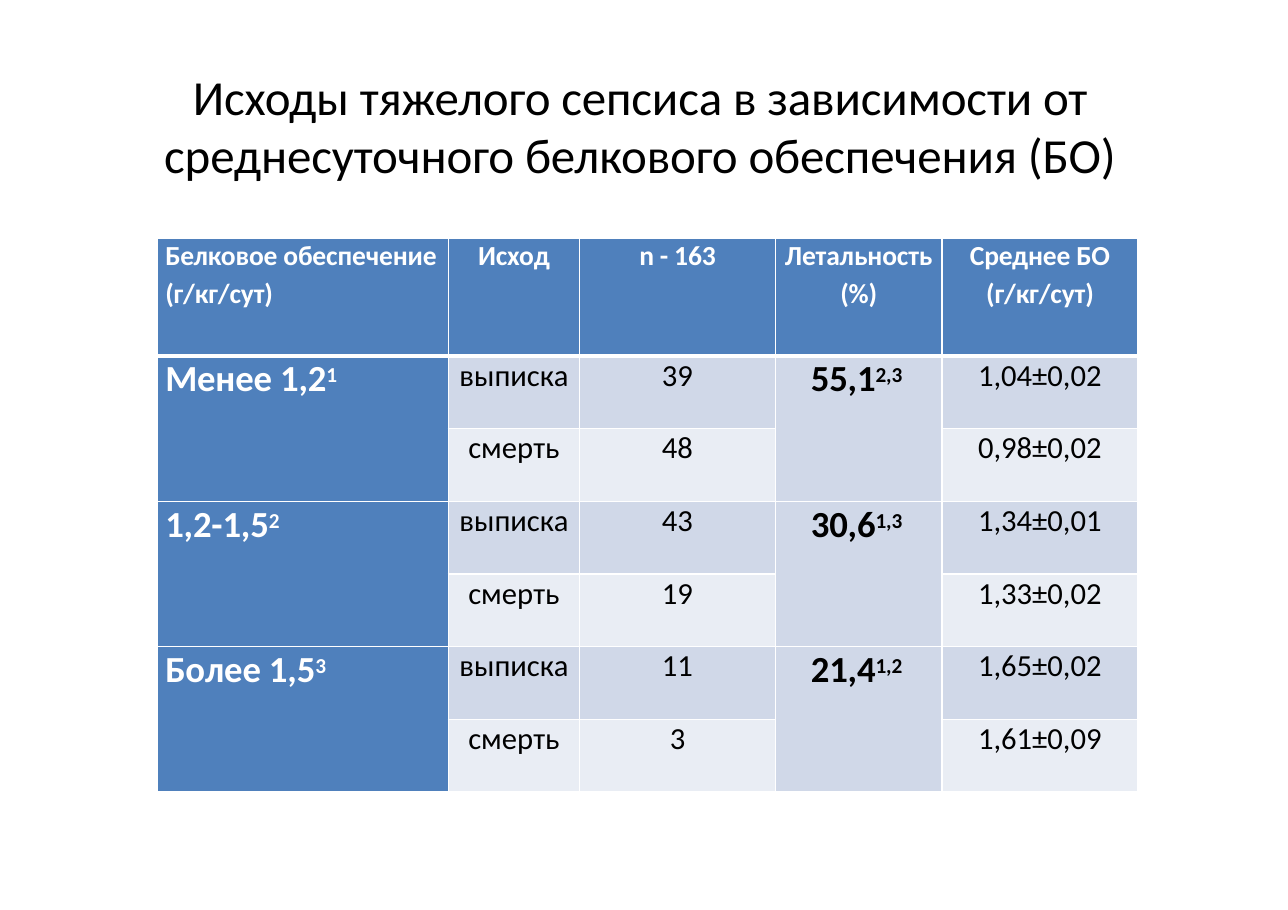
from lxml.etree import SubElement
from pptx import Presentation
from pptx.dml.color import RGBColor
from pptx.enum.text import MSO_ANCHOR, PP_ALIGN
from pptx.oxml.ns import qn
from pptx.util import Inches, Pt

WHITE = RGBColor(0xFF, 0xFF, 0xFF)
BLACK = RGBColor(0, 0, 0)
BLUE = RGBColor(0x4F, 0x80, 0xBC)
BAND_DARK = RGBColor(0xD0, 0xD8, 0xE8)
BAND_LIGHT = RGBColor(0xE9, 0xED, 0xF4)

TITLE = "Исходы тяжелого сепсиса в зависимости от среднесуточного белкового обеспечения (БО)"
HEADERS = [
    ["Белковое обеспечение", "(г/кг/сут)"],
    ["Исход"],
    ["n - 163"],
    ["Летальность", "(%)"],
    ["Среднее БО", "(г/кг/сут)"],
]
# Protein level, mortality (each with its superscript), then discharge and death rows
GROUPS = [
    (("Менее 1,2", "1"), ("55,1", "2,3"), [("39", "1,04±0,02"), ("48", "0,98±0,02")]),
    (("1,2-1,5", "2"), ("30,6", "1,3"), [("43", "1,34±0,01"), ("19", "1,33±0,02")]),
    (("Более 1,5", "3"), ("21,4", "1,2"), [("11", "1,65±0,02"), ("3", "1,61±0,09")]),
]
OUTCOMES = ["выписка", "смерть"]
COL_WIDTHS = [2.64, 1.19, 1.78, 1.51, 1.78]
ROW_HEIGHTS = [1.07] + [0.66] * 6

HEADER = {"size": Pt(18), "bold": True}
GROUP = {"size": Pt(24), "bold": True}
BODY = {"size": Pt(20), "bold": False}


class SlideBuilder:
    font = "Calibri"
    margins = {"margin_left": 0, "margin_top": Inches(0.01),
               "margin_right": 0, "margin_bottom": 0}

    def __init__(self, prs):
        self.s = prs.slides.add_slide(prs.slide_layouts[6])

    def run(self, p, text, fmt, color, spacing=0, baseline=0):
        r = p.add_run()
        r.text = text
        for name, value in {"name": self.font, **fmt}.items():
            setattr(r.font, name, value)
        r.font.color.rgb = color
        rPr = r.font._element
        rPr.set("spc", str(spacing))
        if baseline:
            rPr.set("baseline", str(baseline))

    def indent(self, p, left, first=0):
        pPr = p._p.get_or_add_pPr()
        pPr.set("marL", str(Inches(left)))
        pPr.set("indent", str(Inches(first)))

    def title(self, text, left, top, width, height):
        sp = self.s.shapes.add_textbox(*map(Inches, (left, top, width, height)))
        tf = sp.text_frame
        for name, value in {**self.margins, "word_wrap": True,
                            "vertical_anchor": MSO_ANCHOR.TOP}.items():
            setattr(tf, name, value)
        p = tf.paragraphs[0]
        p.space_before = Pt(1)
        self.indent(p, 0.01, 0.26)
        self.run(p, text, {"size": Pt(32)}, BLACK, -10)

    def table(self, left, top, widths, heights):
        box = map(Inches, (left, top, sum(widths), sum(heights)))
        table = self.s.shapes.add_table(len(heights), len(widths), *box).table
        table.first_row = table.horz_banding = False
        for col, width in zip(table.columns, widths):
            col.width = Inches(width)
        for row, height in zip(table.rows, heights):
            row.height = Inches(height)
        return table

    def borders(self, cell, **widths):
        tcPr = cell._tc.get_or_add_tcPr()
        for side in "LRTB":
            ln = SubElement(tcPr, qn(f"a:ln{side}"), w=str(Pt(widths.get(side, 1))))
            fill = SubElement(ln, qn("a:solidFill"))
            SubElement(fill, qn("a:srgbClr"), val=str(WHITE))

    def fill(self, cell, color):
        cell.fill.solid()
        cell.fill.fore_color.rgb = color

    def text(self, cell, lines, fmt, color, left=None, note=None, spacing=0):
        for name, value in self.margins.items():
            setattr(cell, name, value)
        tf = cell.text_frame
        for i, line in enumerate(lines):
            p = tf.add_paragraph() if i else tf.paragraphs[0]
            p.space_before = Pt(3.2 if i else 0.7)
            if left is None:
                p.alignment = PP_ALIGN.CENTER
            else:
                self.indent(p, left)
            self.run(p, line, fmt, color, spacing)
            if note:
                self.run(p, note, fmt, color, spacing, 24000)


def main():
    prs = Presentation()
    prs.slide_width, prs.slide_height = Inches(11.69), Inches(8.26)
    slide = SlideBuilder(prs)
    slide.title(TITLE, 1.48, 0.59, 8.72, 1.1)

    # Table grid: borders first, then fills
    table = slide.table(1.43, 2.16, COL_WIDTHS, ROW_HEIGHTS)
    for row in range(len(ROW_HEIGHTS)):
        for col in range(len(COL_WIDTHS)):
            cell = table.cell(row, col)
            slide.borders(cell, T=3 if row == 1 else 1, B=3 if row == 0 else 1)
            if row == 0 or col == 0:
                color = BLUE
            else:
                color = BAND_DARK if row % 2 or col == 3 else BAND_LIGHT
            slide.fill(cell, color)

    # Header row
    for col, lines in enumerate(HEADERS):
        slide.text(table.cell(0, col), lines, HEADER, WHITE,
                   left=None if col else 0.07, spacing=-10)

    # Groups of two rows each
    for g, (level, mortality, results) in enumerate(GROUPS):
        top = 1 + 2 * g
        for col, (value, note), color, left in ((0, level, WHITE, 0.07),
                                                (3, mortality, BLACK, 0.32)):
            cell = table.cell(top, col)
            cell.merge(table.cell(top + 1, col))
            slide.text(cell, [value], GROUP, color, left, note, -10)
        for i, (outcome, (count, mean)) in enumerate(zip(OUTCOMES, results)):
            for col, value in ((1, outcome), (2, count), (4, mean)):
                slide.text(table.cell(top + i, col), [value], BODY, BLACK)

    prs.save("out.pptx")


if __name__ == "__main__":
    main()
